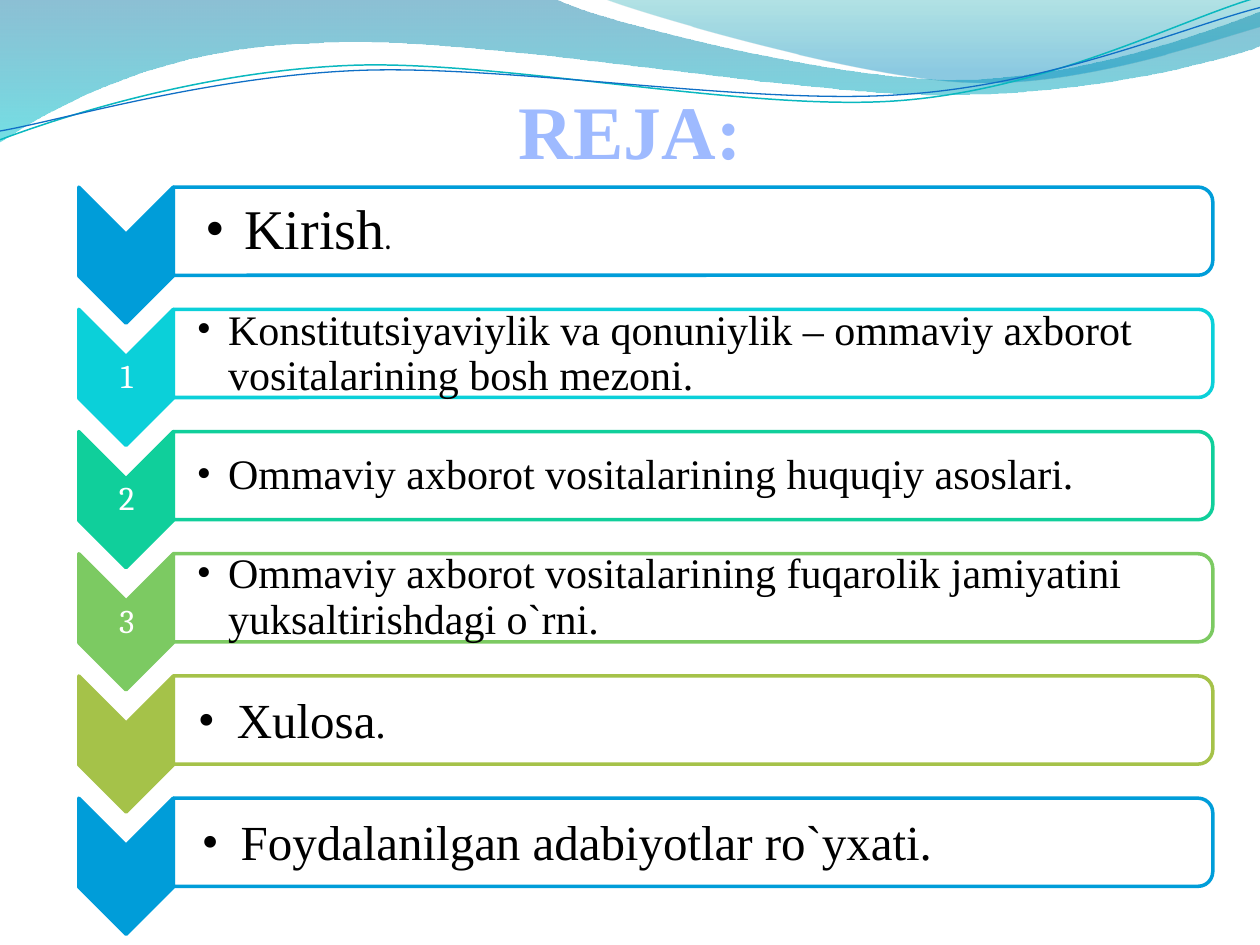
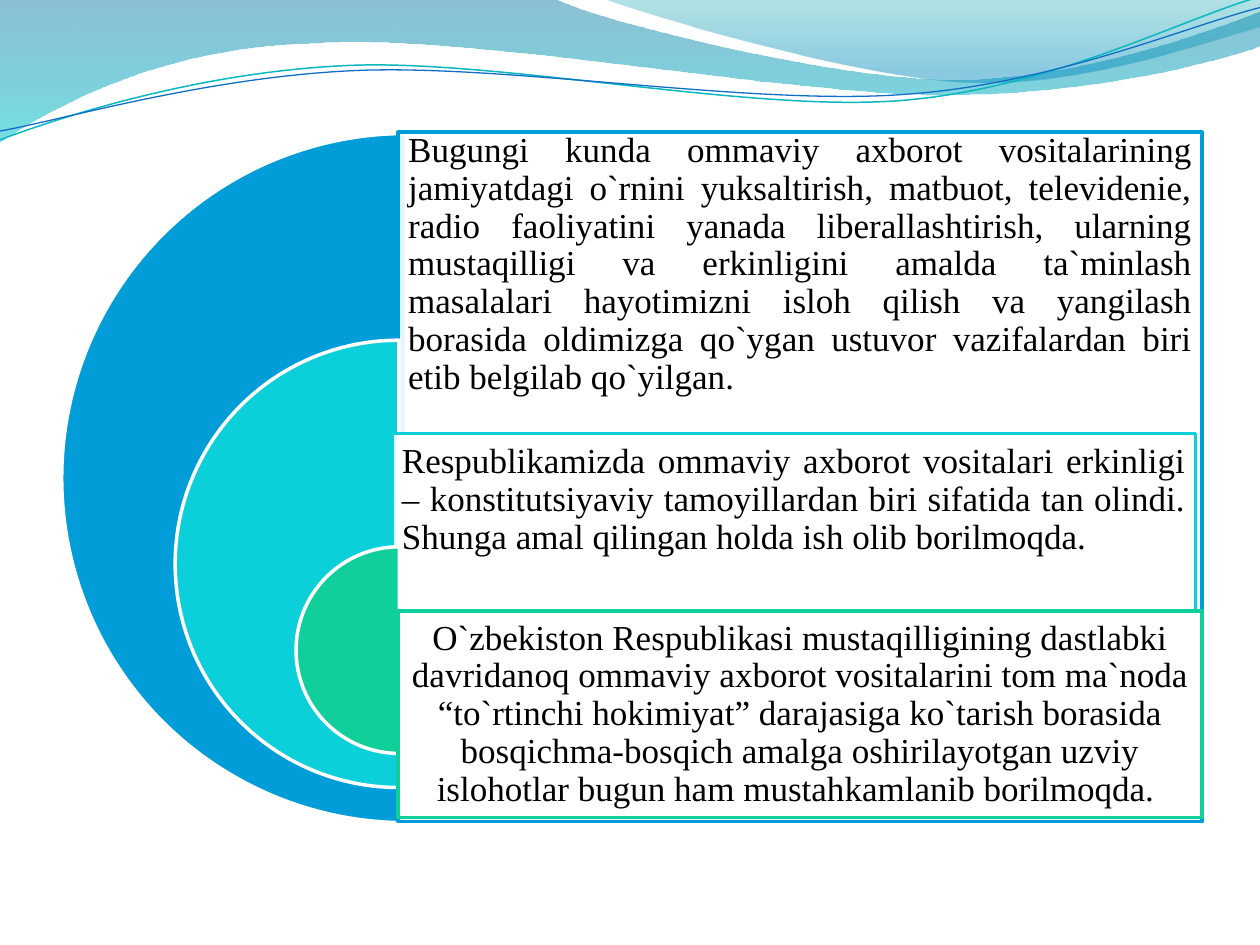
"""Builds a two-slide deck: a numbered plan in chevron rows and a nested-circle summary."""
from lxml.etree import SubElement
from pptx import Presentation
from pptx.dml.color import RGBColor
from pptx.enum.shapes import MSO_SHAPE
from pptx.enum.text import MSO_ANCHOR, PP_ALIGN
from pptx.oxml.ns import qn
from pptx.util import Pt

PX = 9144
SERIF = "Times New Roman"
NUMBER_FONT = "Cambria"
BLACK = RGBColor(0x00, 0x00, 0x00)
WHITE = RGBColor(0xFF, 0xFF, 0xFF)
BLUE = RGBColor(0x00, 0x9D, 0xD9)
CYAN = RGBColor(0x0B, 0xD0, 0xD9)
GREEN = RGBColor(0x10, 0xCF, 0x9B)
LEAF = RGBColor(0x7C, 0xCA, 0x62)
OLIVE = RGBColor(0xA5, 0xC2, 0x49)
TITLE_BLUE = RGBColor(0x9E, 0xBA, 0xFF)
WAVE_DARK = RGBColor(0x00, 0x74, 0xA1)
WAVE_LIGHT = RGBColor(0x00, 0xC6, 0xCF)
CREST_TEAL = RGBColor(0x00, 0xA1, 0xA9)
CREST_BLUE = RGBColor(0x00, 0x8B, 0xBF)
LINE_TEAL = RGBColor(0x0A, 0xB8, 0xBF)
LINE_BLUE = RGBColor(0x0F, 0x6F, 0xC6)


def write(frame, text, size=20, font=SERIF, color=BLACK, bold=False, align=PP_ALIGN.LEFT,
          anchor=MSO_ANCHOR.MIDDLE, insets=(0, 0, 0, 0), spacing=0.9, hang=0, tail=None):
    frame.word_wrap = True
    frame.vertical_anchor = anchor
    frame.margin_left, frame.margin_top, frame.margin_right, frame.margin_bottom = (
        PX * inset for inset in insets)
    paragraph = frame.paragraphs[0]
    paragraph.alignment = align
    paragraph.line_spacing = spacing
    for words, points, name in [(text, size, font)] + ([tail] if tail else []):
        run = paragraph.add_run()
        run.text = words
        run.font.size = Pt(points)
        run.font.name = name
        run.font.bold = bold
        run.font.color.rgb = color
    if hang:
        paragraph.level = 1
        properties = paragraph._p.get_or_add_pPr()
        properties.set("marL", str(PX * hang))
        properties.set("indent", str(-PX * hang))
        SubElement(properties, qn("a:buFont")).set("typeface", SERIF)
        SubElement(properties, qn("a:buChar")).set("char", "•")


def add_block(slide, kind, box, fill, line, opacity=100):
    shape = slide.shapes.add_shape(kind, *(PX * length for length in box))
    shape.shadow.inherit = False
    shape.fill.solid()
    shape.fill.fore_color.rgb = fill
    if opacity < 100:
        color = next(shape.element.iter(qn("a:srgbClr")))
        SubElement(color, qn("a:alpha")).set("val", str(opacity * 1000))
    shape.line.color.rgb = line
    shape.line.width = Pt(2)
    return shape


presentation = Presentation()
presentation.slide_width = PX * 1000
presentation.slide_height = PX * 750
plan_slide = presentation.slides.add_slide(presentation.slide_layouts[5])
summary_slide = presentation.slides.add_slide(presentation.slide_layouts[6])

WAVES = [
    ((0, 0), [(440, -1), (476, 17, 664, 63, 758, 63), (853, 63, 958, 26, 1000, 9),
              (1001, 36), (983, 44, 870, 76, 746, 75), (622, 75, 382, 28, 257, 34),
              (129, 36, 46, 83, -1, 113), (0, 0)],
     [(0, WAVE_DARK, 45), (1, WAVE_LIGHT, 55)], None, 0),
    ((479, -1), [(509, 11, 682, 62, 769, 65), (856, 69, 961, 32, 1000, 21), (1000, 0),
                 (479, -1)],
     [(0, CREST_TEAL, 30), (0.8, CREST_BLUE, 45)], None, 0),
    ((0, 111), [(48, 93, 158, 57, 277, 52), (395, 47, 593, 89, 713, 80),
                (833, 71, 938, 15, 998, -2)], None, LINE_TEAL, 0.85),
    ((0, 104), [(47, 96, 164, 61, 283, 56), (403, 51, 597, 84, 717, 75),
                (836, 67, 941, 21, 1000, 6)], None, LINE_BLUE, 0.75),
]
for start, segments, stops, line, width in WAVES:
    points = [segment[at:at + 2] for segment in segments for at in range(0, len(segment), 2)]
    builder = plan_slide.shapes.build_freeform(PX * start[0], PX * start[1])
    builder.add_line_segments([(PX * x, PX * y) for x, y in points], close=bool(stops))
    wave = builder.convert_to_shape()
    wave.shadow.inherit = False
    outline = next(wave.element.iter(qn("a:path")))
    edges = iter(outline.findall(qn("a:lnTo")))
    for segment in segments:
        edge = next(edges)
        if len(segment) == 6:
            edge.tag = qn("a:cubicBezTo")
            for follower in (next(edges), next(edges)):
                edge.append(follower[0])
                outline.remove(follower)
    if stops:
        wave.line.fill.background()
        wave.fill.gradient()
        wave.fill.gradient_angle = 270
        for stop, (position, color, opacity) in zip(wave.fill.gradient_stops, stops):
            stop.position = position
            stop.color.rgb = color
        for color, (position, rgb, opacity) in zip(wave.element.iter(qn("a:srgbClr")), stops):
            SubElement(color, qn("a:alpha")).set("val", str(opacity * 1000))
    else:
        wave.fill.background()
        wave.line.color.rgb = line
        wave.line.width = Pt(width)
    presentation.slide_master.shapes.element.append(wave.element)

title = plan_slide.shapes.title
title.left, title.top, title.width, title.height = PX * 50, PX * 55, PX * 900, PX * 84
write(title.text_frame, "REJA:", size=43.2, color=TITLE_BLUE, bold=True, align=PP_ALIGN.CENTER,
      anchor=MSO_ANCHOR.BOTTOM, insets=(0, 5, 0, 0), spacing=1.0)

PLAN_ROWS = [
    ("", BLUE, "Kirish", 32, (25, 3, 2, 2), 31, (".", 19, NUMBER_FONT)),
    ("1", CYAN, "Konstitutsiyaviylik va qonuniylik – ommaviy axborot vositalarining bosh mezoni.",
     24, (18, 3, 2, 2), 25, None),
    ("2", GREEN, "Ommaviy axborot vositalarining huquqiy asoslari.", 24, (18, 2, 2, 2), 25, None),
    ("3", LEAF, "Ommaviy axborot vositalarining fuqarolik jamiyatini yuksaltirishdagi o`rni.",
     24, (18, 2, 2, 2), 25, None),
    ("", OLIVE, "Xulosa", 28, (19, 6, 2, 2), 31, (".", 24, SERIF)),
    ("", BLUE, "Foydalanilgan adabiyotlar ro`yxati.", 28, (22, 6, 2, 2), 31, None),
]
ROW_PITCH = 97
for index, (number, color, text, size, insets, hang, tail) in enumerate(PLAN_ROWS):
    offset = ROW_PITCH * index
    chevron = add_block(plan_slide, MSO_SHAPE.CHEVRON, (46, 165 + offset, 108, 75), color, color)
    chevron.rotation = 90
    if number:
        label = plan_slide.shapes.add_textbox(PX * 63, PX * (187 + offset), PX * 75, PX * 32)
        write(label.text_frame, number, size=19, font=NUMBER_FONT, color=WHITE,
              align=PP_ALIGN.CENTER, insets=(1, 1, 1, 1))
    bar = add_block(plan_slide, MSO_SHAPE.ROUND_2_SAME_RECTANGLE, (515, offset - 229, 70, 825),
                    WHITE, color, opacity=90)
    bar.rotation = 90
    item = plan_slide.shapes.add_textbox(PX * 138, PX * (152 + offset), PX * 821, PX * 63)
    write(item.text_frame, text, size=size, insets=insets, hang=hang, tail=tail)

SUMMARY_LEVELS = [
    (BLUE, (49, 106, 547, 547), (316, 105, 638, 547), PP_ALIGN.JUSTIFY, MSO_ANCHOR.TOP, 0,
     "Bugungi kunda ommaviy axborot vositalarining jamiyatdagi o`rnini yuksaltirish, matbuot, "
     "televidenie, radio faoliyatini yanada liberallashtirish, ularning mustaqilligi va "
     "erkinligini amalda ta`minlash masalalari hayotimizni isloh qilish va yangilash borasida "
     "oldimizga qo`ygan ustuvor vazifalardan biri etib belgilab qo`yilgan."),
    (CYAN, (139, 270, 355, 355), (311, 344, 638, 141), PP_ALIGN.JUSTIFY, MSO_ANCHOR.TOP, 8,
     "Respublikamizda ommaviy axborot vositalari erkinligi – konstitutsiyaviy tamoyillardan "
     "biri sifatida tan olindi. Shunga amal qilingan holda ish olib borilmoqda. "),
    (GREEN, (235, 434, 164, 164), (316, 485, 638, 164), PP_ALIGN.CENTER, MSO_ANCHOR.MIDDLE, 8,
     "O`zbekiston Respublikasi mustaqilligining dastlabki davridanoq ommaviy axborot "
     "vositalarini tom ma`noda “to`rtinchi hokimiyat” darajasiga ko`tarish borasida "
     "bosqichma-bosqich amalga oshirilayotgan uzviy islohotlar bugun ham mustahkamlanib "
     "borilmoqda. "),
]
for color, circle_box, panel_box, align, anchor, top_inset, text in SUMMARY_LEVELS:
    half_circle = add_block(summary_slide, MSO_SHAPE.PIE, circle_box, color, WHITE)
    half_circle.adjustments[0] = 54
    half_circle.adjustments[1] = 162
    panel = add_block(summary_slide, MSO_SHAPE.RECTANGLE, panel_box, WHITE, color, opacity=90)
    write(panel.text_frame, text, align=align, anchor=anchor, insets=(8, top_inset, 8, 8))

presentation.save("out.pptx")
